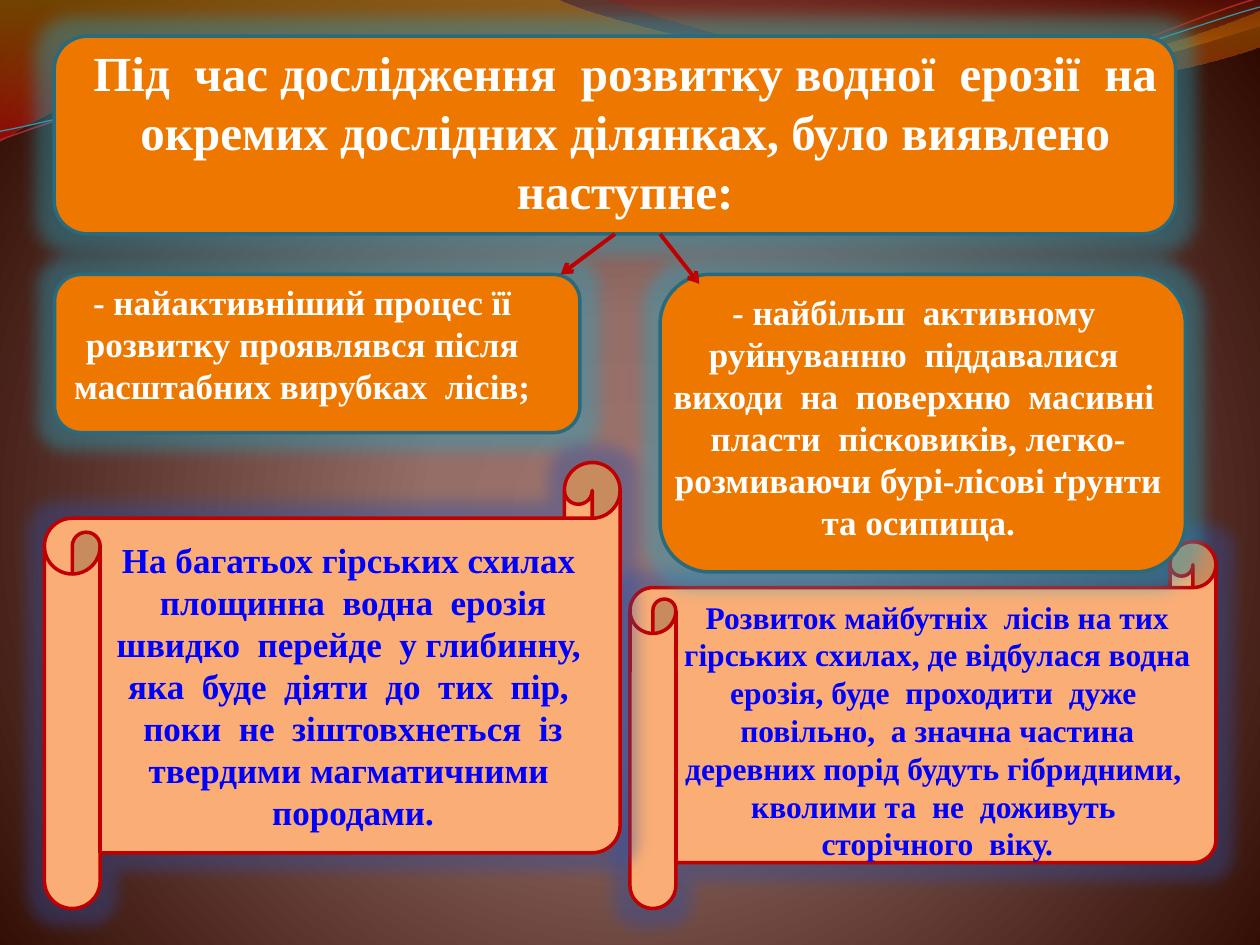
"""Build the slide on the findings about water erosion."""
from dataclasses import dataclass

from pptx import Presentation
from pptx.dml.color import RGBColor
from pptx.enum import shapes, text
from pptx.oxml import parse_xml
from pptx.oxml.ns import nsdecls, qn
from pptx.util import Pt


@dataclass(frozen=True)
class Theme:
    """Colours, type sizes and line widths of the slide."""
    font: str = "Times New Roman"
    title_size: int = 28
    body_size: int = 20
    small_size: int = 18
    white: str = "FFFFFF"
    blue: str = "0000FF"
    orange: str = "EE7700"
    peach: str = "FAAE76"
    teal: str = "296B7C"
    red: str = "C00000"
    teal_glow: str = "22A6C4"
    blue_glow: str = "2E4FA6"
    glow_radius: int = 18
    outline: float = 2
    arrow: float = 2.25
    background: tuple = ((0, "9F736D", 100), (25, "956E68", 100), (100, "2F0A00", 100))
    left_wave: tuple = ((0, "C38B00", 45), (100, "D60305", 55))
    right_wave: tuple = ((0, "A11112", 30), (80, "E9A600", 45))
    red_strand: tuple = ("AC2829", 0.85)
    teal_strand: tuple = ("3891A7", 0.75)


THEME = Theme()
DOWNWARD = '<a:lin ang="5400000" scaled="0"/>'
RADIAL = '<a:path path="circle"><a:fillToRect l="10000" t="110000" r="10000" b="100000"/></a:path>'
LEFT_WAVE = [(0, 0), (317, -1), (343, 12, 478, 45, 546, 45), (614, 45, 690, 19, 720, 6),
             (721, 26), (708, 32, 626, 55, 537, 54), (448, 54, 275, 20, 185, 24),
             (93, 26, 33, 60, -1, 81)]
RIGHT_WAVE = [(345, -1), (366, 8, 491, 45, 554, 47), (616, 50, 692, 23, 720, 15), (720, 0)]
RED_STRAND = [(0, 80), (35, 67, 114, 41, 199, 37), (284, 34, 427, 64, 513, 58),
              (599, 51, 675, 11, 719, -1)]
TEAL_STRAND = [(0, 75), (34, 69, 118, 44, 204, 40), (290, 37, 430, 60, 516, 54),
               (602, 48, 678, 15, 720, 4)]


def set_gradient(fill, element, stops, direction):
    """Give the fill inside an element gradient stops with opacity."""
    fill.gradient()
    gradient = element.find(".//" + qn("a:gradFill"))
    stop_xml = ""
    for position, color, opacity in stops:
        alpha = f'<a:alpha val="{opacity * 1000}"/>' if opacity < 100 else ""
        stop_xml += (f'<a:gs pos="{position * 1000}"><a:srgbClr val="{color}">'
                     f'{alpha}</a:srgbClr></a:gs>')
    gradient.getparent().replace(gradient, parse_xml(
        f'<a:gradFill {nsdecls("a")} rotWithShape="1"><a:gsLst>{stop_xml}</a:gsLst>'
        f'{direction}</a:gradFill>'))


def set_line(line, color, width):
    """Set the colour and width of a line."""
    line.color.rgb = RGBColor.from_string(color)
    line.width = Pt(width)


def add_outline(slide, segments, close):
    """Add a freeform of straight and cubic segments."""
    anchors = [(Pt(segment[-2]), Pt(segment[-1])) for segment in segments]
    builder = slide.shapes.build_freeform(*anchors[0])
    builder.add_line_segments(anchors[1:], close=close)
    shape = builder.convert_to_shape()
    shape.shadow.inherit = False
    straight_parts = list(shape.element.iter(qn("a:lnTo")))
    for part, segment in zip(straight_parts, segments[1:]):
        if len(segment) == 6:
            points = "".join(f'<a:pt x="{Pt(x) - shape.left}" y="{Pt(y) - shape.top}"/>'
                             for x, y in zip(segment[::2], segment[1::2]))
            part.getparent().replace(part, parse_xml(
                f'<a:cubicBezTo {nsdecls("a")}>{points}</a:cubicBezTo>'))
    return shape


def add_wave(slide, segments, stops):
    """Add a translucent wave."""
    shape = add_outline(slide, segments, True)
    set_gradient(shape.fill, shape.element, stops, DOWNWARD)
    shape.line.fill.background()


def add_strand(slide, segments, style):
    """Add a thin curved strand."""
    shape = add_outline(slide, segments, False)
    shape.fill.background()
    set_line(shape.line, *style)


def add_panel(slide, preset, box, fill, line, glow):
    """Add a filled panel with a soft glow."""
    shape = slide.shapes.add_shape(preset, *map(Pt, box))
    shape.fill.solid()
    shape.fill.fore_color.rgb = RGBColor.from_string(fill)
    set_line(shape.line, line, THEME.outline)
    shape.shadow.inherit = False
    shape.element.spPr.find(qn("a:effectLst")).append(parse_xml(
        f'<a:glow {nsdecls("a")} rad="{Pt(THEME.glow_radius)}"><a:srgbClr val="{glow}">'
        f'<a:alpha val="40000"/></a:srgbClr></a:glow>'))
    return shape


def add_card(slide, box):
    """Add an orange rounded card."""
    return add_panel(slide, shapes.MSO_SHAPE.ROUNDED_RECTANGLE, box,
                     THEME.orange, THEME.teal, THEME.teal_glow)


def add_scroll(slide, box):
    """Add a peach scroll."""
    return add_panel(slide, shapes.MSO_SHAPE.HORIZONTAL_SCROLL, box,
                     THEME.peach, THEME.red, THEME.blue_glow)


def add_text(slide, box, wording, size, color):
    """Add a centred bold text box."""
    frame = slide.shapes.add_textbox(*map(Pt, box)).text_frame
    frame.word_wrap = True
    frame.margin_left, frame.margin_right = Pt(0), Pt(1.44)
    paragraph = frame.paragraphs[0]
    paragraph.alignment = text.PP_ALIGN.CENTER
    paragraph._p.get_or_add_pPr().set("marR", str(Pt(3.6)))
    run = paragraph.add_run()
    run.text = wording
    run.font.name = THEME.font
    run.font.size = Pt(size)
    run.font.bold = True
    run.font.color.rgb = RGBColor.from_string(color)


def add_arrow(slide, start, end):
    """Add a red arrow and return its connector."""
    connector = slide.shapes.add_connector(shapes.MSO_CONNECTOR.STRAIGHT, *map(Pt, start + end))
    set_line(connector.line, THEME.red, THEME.arrow)
    properties = connector.element.spPr
    properties.find(qn("a:ln")).append(parse_xml(f'<a:tailEnd {nsdecls("a")} type="arrow"/>'))
    properties.append(parse_xml(f'<a:effectLst {nsdecls("a")}/>'))
    return connector


def main():
    """Build and save the slide."""
    presentation = Presentation()
    presentation.slide_width, presentation.slide_height = Pt(720), Pt(540)
    slide = presentation.slides.add_slide(presentation.slide_layouts[6])
    set_gradient(slide.background.fill, slide.element, THEME.background, RADIAL)
    add_wave(slide, LEFT_WAVE, THEME.left_wave)
    add_wave(slide, RIGHT_WAVE, THEME.right_wave)
    add_strand(slide, RED_STRAND, THEME.red_strand)
    add_strand(slide, TEAL_STRAND, THEME.teal_strand)

    add_scroll(slide, (360, 309.6, 334.8, 209.5))
    title_card = add_card(slide, (31, 20.7, 640.8, 113))
    add_text(slide, (42.3, 20.7, 635, 79.2),
             "Під  час дослідження  розвитку водної  ерозії  на окремих дослідних ділянках, "
             "було виявлено наступне:", THEME.title_size, THEME.white)
    add_card(slide, (31.2, 156.8, 300.2, 90.4))
    add_text(slide, (25.2, 156.8, 300.2, 85),
             "- найактивніший процес її розвитку проявлявся після масштабних вирубках  лісів;",
             THEME.body_size, THEME.white)
    add_card(slide, (377.2, 156.8, 300.2, 170))
    add_text(slide, (377.2, 162.4, 300.2, 153.4),
             "- найбільш  активному  руйнуванню  піддавалися  виходи  на  поверхню  масивні  "
             "пласти  пісковиків, легко-розмиваючи бурі-лісові ґрунти та осипища.",
             THEME.body_size, THEME.white)
    add_arrow(slide, (351.4, 133.7), (320.4, 156.8)).begin_connect(title_card, 2)
    add_arrow(slide, (377.2, 133.7), (399.6, 162.2))
    add_scroll(slide, (25.4, 264.3, 329, 254.9))
    add_text(slide, (388.1, 338, 300.2, 158.4),
             "Розвиток майбутніх  лісів на тих гірських схилах, де відбулася водна ерозія, "
             "буде  проходити  дуже  повільно,  а значна частина деревних порід будуть "
             "гібридними,  кволими та  не  доживуть  сторічного  віку.",
             THEME.small_size, THEME.blue)
    add_text(slide, (59.6, 304, 289.4, 175.7),
             "На багатьох гірських схилах  площинна  водна  ерозія швидко  перейде  у глибинну,  "
             "яка  буде  діяти  до  тих  пір,  поки  не  зіштовхнеться  із твердими "
             "магматичними  породами.", THEME.body_size, THEME.blue)
    presentation.save("out.pptx")


if __name__ == "__main__":
    main()
